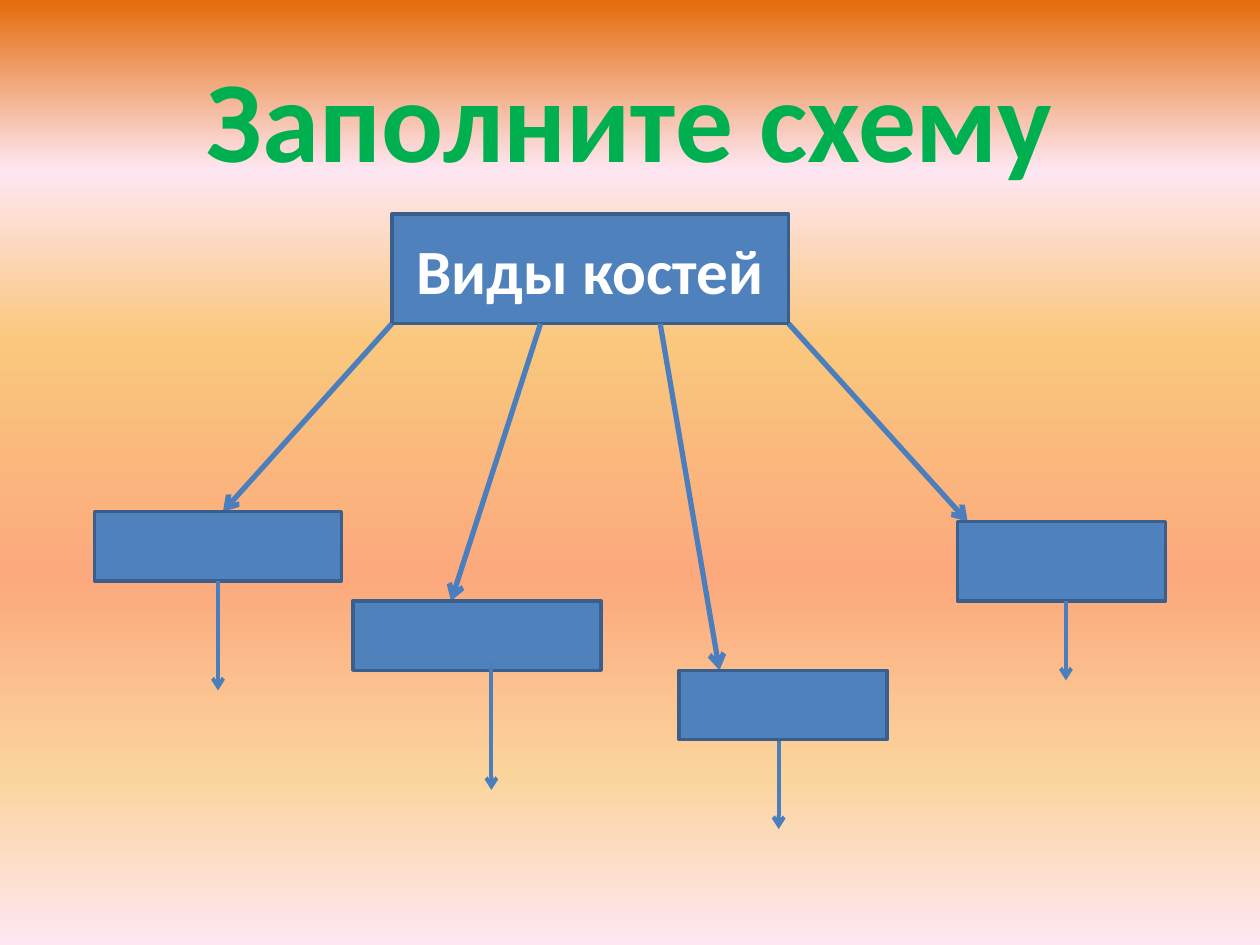
from lxml import etree
from pptx import Presentation
from pptx.dml.color import RGBColor
from pptx.enum.shapes import MSO_CONNECTOR, MSO_SHAPE
from pptx.enum.text import MSO_ANCHOR, PP_ALIGN
from pptx.oxml.ns import qn
from pptx.util import Inches, Pt

STRAIGHT = MSO_CONNECTOR.STRAIGHT
RECTANGLE = MSO_SHAPE.RECTANGLE
MIDDLE = MSO_ANCHOR.MIDDLE
CENTER = PP_ALIGN.CENTER

GREEN = RGBColor(0x00, 0xB0, 0x50)
WHITE = RGBColor(0xFF, 0xFF, 0xFF)
BOX_FILL = RGBColor(0x4F, 0x81, 0xBD)
BOX_LINE = RGBColor(0x3A, 0x5F, 0x8C)
ARROW_BLUE = RGBColor(0x4B, 0x7E, 0xBC)
BACKGROUND_STOPS = [
    (0, RGBColor(0xE4, 0x6C, 0x0A)),
    (18, RGBColor(0xFE, 0xE7, 0xF2)),
    (36, RGBColor(0xFA, 0xC7, 0x7D)),
    (61, RGBColor(0xFB, 0xA9, 0x7D)),
    (82, RGBColor(0xFB, 0xD4, 0x9C)),
    (100, RGBColor(0xFE, 0xE7, 0xF2)),
]

deck = Presentation()
deck.slide_width, deck.slide_height = Inches(10), Inches(7.5)
page = deck.slides.add_slide(deck.slide_layouts[5])


def add_box(left, top, width, height):
    box = page.shapes.add_shape(
        RECTANGLE, Inches(left), Inches(top), Inches(width), Inches(height))
    box.shadow.inherit = False
    box.fill.solid()
    box.fill.fore_color.rgb = BOX_FILL
    box.line.color.rgb = BOX_LINE
    box.line.width = Pt(2)
    return box


def add_arrow(start_x, start_y, end_x, end_y, weight):
    arrow = page.shapes.add_connector(
        STRAIGHT, Inches(start_x), Inches(start_y), Inches(end_x), Inches(end_y))
    arrow.line.color.rgb = ARROW_BLUE
    arrow.line.width = Pt(weight)
    etree.SubElement(arrow.line._get_or_add_ln(), qn("a:tailEnd"), type="arrow")
    etree.SubElement(arrow._element.spPr, qn("a:effectLst"))
    return arrow


# Background: gradient running from top to bottom
fill = page.background.fill
fill.gradient()
fill.gradient_angle = 270
stop_list = page._element.find(".//" + qn("a:gsLst"))
for stop in list(stop_list):
    stop_list.remove(stop)
for percent, color in BACKGROUND_STOPS:
    stop = etree.SubElement(stop_list, qn("a:gs"), pos=str(percent * 1000))
    etree.SubElement(stop, qn("a:srgbClr"), val=str(color))

# Title
title = page.shapes.title
title.left, title.top = Inches(0.5), Inches(0.3)
title.width, title.height = Inches(9), Inches(1.25)

# Root of the scheme
root = add_box(3.11, 1.7, 3.15, 0.87)

# Both texts share everything but size and colour
for shape, text, size, color in [
    (title, "Заполните схему", 66, GREEN),
    (root, "Виды костей", 36, WHITE),
]:
    shape.text_frame.text = text
    shape.text_frame.vertical_anchor = MIDDLE
    para = shape.text_frame.paragraphs[0]
    para.alignment = CENTER
    para.font.name = "Calibri"
    para.font.size = Pt(size)
    para.font.bold = True
    para.font.color.rgb = color

# Arrows from the root to the branches
for start_x, end_x, end_y in [
    (3.11, 1.77, 4.06),
    (6.26, 7.68, 4.14),
    (4.29, 3.58, 4.77),
    (5.24, 5.71, 5.32),
]:
    add_arrow(start_x, 2.57, end_x, end_y, 3)

# Empty branch boxes to fill in
branches = [
    add_box(left, top, width, height)
    for left, top, width, height in [
        (0.75, 4.06, 1.96, 0.55),
        (2.8, 4.77, 1.97, 0.55),
        (5.39, 5.32, 1.65, 0.55),
        (7.6, 4.14, 1.65, 0.63),
    ]
]

# Arrows pointing down from the branches; only the first leaves mid-side
down_arrows = [
    add_arrow(x, start_y, x, end_y, 2.25)
    for x, start_y, end_y in [
        (1.73, 4.61, 5.48),
        (3.9, 5.25, 6.27),
        (6.18, 5.88, 6.58),
        (8.46, 4.77, 5.4),
    ]
]
down_arrows[0].begin_connect(branches[0], 2)

deck.save("out.pptx")
